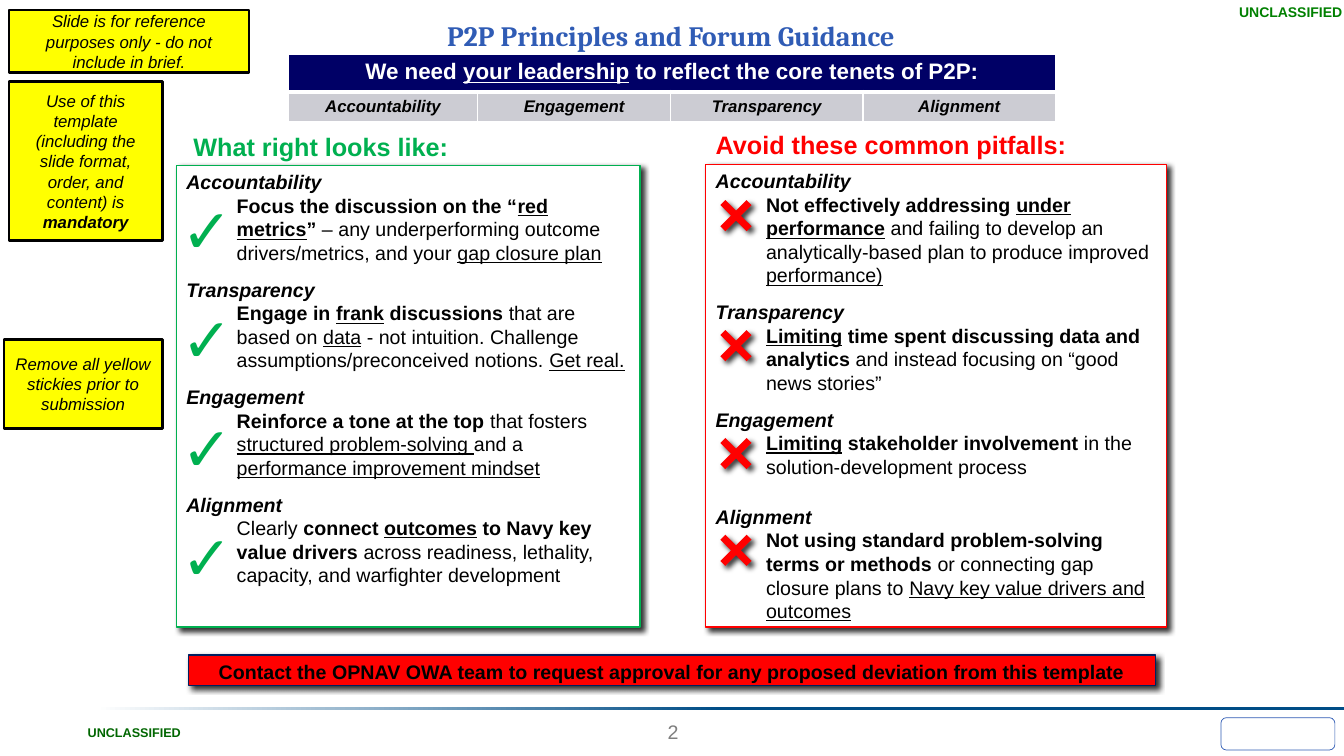
"""Build the P2P principles and forum guidance slide."""
from lxml import etree
from pptx import Presentation
from pptx import util as u
from pptx.dml import color
from pptx.enum import shapes, text
from pptx.oxml import ns

LEFT, CENTER, RIGHT = text.PP_ALIGN.LEFT, text.PP_ALIGN.CENTER, text.PP_ALIGN.RIGHT
TOP, MIDDLE = text.MSO_ANCHOR.TOP, text.MSO_ANCHOR.MIDDLE
RECT = shapes.MSO_SHAPE.RECTANGLE
GREEN, RED, YELLOW, BLACK, WHITE = "00B050", "FF0000", "FFFF00", "000000", "FFFFFF"


def rgb(value):
    return color.RGBColor.from_string(value)


def add_xml(parent, tag, **attributes):
    return etree.SubElement(parent, ns.qn(tag), attributes)


def write(paragraph, content, size=14, ink=BLACK, font="Arial", bold=False, italic=False,
          align=LEFT, before=0):
    """Write text in which *stars* switch bold and _underscores_ underline."""
    paragraph.alignment = align
    paragraph.space_before = u.Pt(before)
    for i, chunk in enumerate(content.split("*")):
        for j, piece in enumerate(chunk.split("_")):
            if piece:
                run = paragraph.add_run()
                run.text = piece
                run.font.name, run.font.size = font, u.Pt(size)
                run.font.color.rgb = rgb(ink)
                run.font.bold = bold != (i % 2 == 1)
                run.font.italic = italic
                run.font.underline = j % 2 == 1


class GuidanceSlide:
    """Holds the style and the current slide."""

    def __init__(self, deck):
        self.slide = deck.slides.add_slide(deck.slide_layouts[6])
        self.indent = u.Inches(0.5)
        self.gap = 9.5

    def label(self, box, content, anchor=TOP, wrap=True, insets=(0.1, 0.05), **style):
        frame = self.slide.shapes.add_textbox(*map(u.Inches, box)).text_frame
        frame.word_wrap, frame.vertical_anchor = wrap, anchor
        frame.margin_left = frame.margin_right = u.Inches(insets[0])
        frame.margin_top = frame.margin_bottom = u.Inches(insets[1])
        write(frame.paragraphs[0], content, **style)

    def shape(self, box, fill, line=None, weight=1, kind=RECT, shadow=False):
        shape = self.slide.shapes.add_shape(kind, *map(u.Inches, box))
        shape.shadow.inherit = False
        shape.fill.solid()
        shape.fill.fore_color.rgb = rgb(fill)
        if line:
            shape.line.color.rgb = rgb(line)
            shape.line.width = u.Pt(weight)
        else:
            shape.line.fill.background()
        if shadow:
            effects = shape._element.spPr.find(ns.qn("a:effectLst"))
            outer = add_xml(effects, "a:outerShdw", blurRad=str(u.Pt(4)), dist=str(u.Pt(3)),
                            dir="2700000", algn="tl", rotWithShape="0")
            add_xml(add_xml(outer, "a:srgbClr", val=BLACK), "a:alpha", val="80000")
        shape.text_frame.word_wrap = True
        shape.text_frame.vertical_anchor = TOP
        return shape

    def sticky(self, box, content):
        frame = self.shape(box, YELLOW, BLACK, 2).text_frame
        frame.vertical_anchor = MIDDLE
        write(frame.paragraphs[0], content, size=12, italic=True, align=CENTER)

    def panel(self, box, line, tenets):
        frame = self.shape(box, WHITE, line, shadow=True).text_frame
        for i, (tenet, advice, gaps) in enumerate(tenets):
            heading = frame.add_paragraph() if i else frame.paragraphs[0]
            write(heading, tenet, bold=True, italic=True, before=gaps * self.gap)
            body = frame.add_paragraph()
            body._p.get_or_add_pPr().set("marL", str(self.indent))
            write(body, advice)

    def check(self, left, top):
        self.label((left, top, 0.7, 0.84), "✓", wrap=False, size=44, ink=GREEN, bold=True)

    def cross(self, left, top):
        mark = self.shape((left, top, 0.5, 0.5), RED, kind=shapes.MSO_SHAPE.MATH_MULTIPLY,
                          shadow=True)
        mark.adjustments[0] = 0.139

    def cell(self, cell, content, fill, bottom=1, **style):
        properties = cell._tc.get_or_add_tcPr()
        for side, width in zip("LRTB", (1, 1, 1, bottom)):
            edge = add_xml(properties, "a:ln" + side, w=str(u.Pt(width)))
            add_xml(add_xml(edge, "a:solidFill"), "a:srgbClr", val=WHITE)
        cell.fill.solid()
        cell.fill.fore_color.rgb = rgb(fill)
        write(cell.text_frame.paragraphs[0], content, bold=True, align=CENTER, **style)

    def tenet_table(self, box, headline, tenets):
        table = self.slide.shapes.add_table(2, len(tenets), *map(u.Inches, box)).table
        table.first_row = table.horz_banding = False
        for row, height in zip(table.rows, (0.37, 0.3)):
            row.height = u.Inches(height)
        for i, tenet in enumerate(tenets):
            table.columns[i].width = u.Inches(1.91 if i else 1.88)
            self.cell(table.cell(0, i), "" if i else headline, "000066", 3, size=16, ink=WHITE)
            self.cell(table.cell(1, i), tenet, "CCCCD3", size=12, italic=True)
        table.cell(0, 0).merge(table.cell(0, len(tenets) - 1))

    def footer_rule(self, box):
        rule = self.shape(box, WHITE)
        rule.fill.gradient()
        rule.fill.gradient_angle = 0
        for stop, (position, ink) in zip(rule.fill.gradient_stops, ((0, WHITE), (0.5, "004D86"))):
            stop.position = position
            stop.color.rgb = rgb(ink)

    def banner(self, box, content):
        frame = self.shape(box, RED, "002060", shadow=True).text_frame
        write(frame.paragraphs[0], content, bold=True, align=CENTER)


RIGHT_LOOKS = (
    ("Accountability", "*Focus the discussion on the “_red metrics_”* – any underperforming "
     "outcome drivers/metrics, and your _gap closure plan_", 0),
    ("Transparency", "*Engage in _frank_ discussions *that are based on _data_ - not intuition. "
     "Challenge assumptions/preconceived notions. _Get real._", 1),
    ("Engagement", "*Reinforce a tone at the top *that fosters _structured problem-solving _"
     "and a _performance improvement mindset_", 1),
    ("Alignment", "Clearly *connect _outcomes_ to Navy key value drivers *across readiness, "
     "lethality, capacity, and warfighter development", 1),
)
PITFALLS = (
    ("Accountability", "*Not effectively addressing _under performance_ *and failing to develop "
     "an analytically-based plan to produce improved _performance)_", 0),
    ("Transparency", "*_Limiting_ time spent discussing data and analytics* and instead focusing "
     "on “good news stories”", 1),
    ("Engagement", "*_Limiting_ stakeholder involvement* in the solution-development process", 1),
    ("Alignment", "*Not using standard problem-solving terms or methods* or connecting gap "
     "closure plans to _Navy key value drivers and outcomes_", 2),
)


def main():
    deck = Presentation()
    deck.slide_width, deck.slide_height = u.Inches(13.33), u.Inches(7.5)
    page = GuidanceSlide(deck)

    page.label((11.36, 0.01, 2.05, 0.21), "UNCLASSIFIED", insets=(0.1, 0.02), size=10,
               ink="008000", bold=True, align=RIGHT)
    page.label((0.87, 7.19, 4.1, 0.15), "UNCLASSIFIED", insets=(0, 0), size=9,
               ink="006600", bold=True)
    page.label((6.1, 7.09, 1.15, 0.34), "2", ink="7F7F7F", align=CENTER)
    page.footer_rule((0.95, 7.01, 12.4, 0.03))
    page.shape((12.11, 7.12, 1.13, 0.32), WHITE, "305CB5", 0.5,
               shapes.MSO_SHAPE.ROUNDED_RECTANGLE)

    page.label((0.94, 0.1, 11.43, 0.5), "P2P Principles and Forum Guidance", MIDDLE, size=20,
               ink="305CB5", font="Cambria", bold=True, align=CENTER)
    page.tenet_table((2.86, 0.54, 7.61, 0.67),
                     "We need _your leadership_ to reflect the core tenets of P2P:",
                     ("Accountability", "Engagement", "Transparency", "Alignment"))

    page.panel((1.75, 1.64, 4.6, 4.58), GREEN, RIGHT_LOOKS)
    page.panel((7, 1.63, 4.57, 4.59), RED, PITFALLS)
    page.label((1.82, 1.25, 2.75, 0.4), "What right looks like:", wrap=False, size=18,
               ink=GREEN, bold=True)
    page.label((7, 1.23, 3.71, 0.4), "Avoid these common pitfalls:", wrap=False, size=18,
               ink=RED, bold=True)
    for i in range(len(RIGHT_LOOKS)):
        page.check(1.7, 1.86 + 1.08 * i)
    for top in (1.89, 3.18, 4.25, 5.21):
        page.cross(7.05, top)

    page.sticky((0.09, 0.1, 2.38, 0.62),
                "Slide is for reference purposes only - do not include in brief.")
    page.sticky((0.09, 0.81, 1.52, 1.58), "Use of this template (including the slide format, "
                "order, and content) is *mandatory*")
    page.sticky((0.04, 3.37, 1.57, 0.88), "Remove all yellow stickies prior to submission")
    page.banner((1.87, 6.5, 9.59, 0.3), "Contact the OPNAV OWA team to request approval for any "
                "proposed deviation from this template")
    deck.save("out.pptx")


if __name__ == "__main__":
    main()
